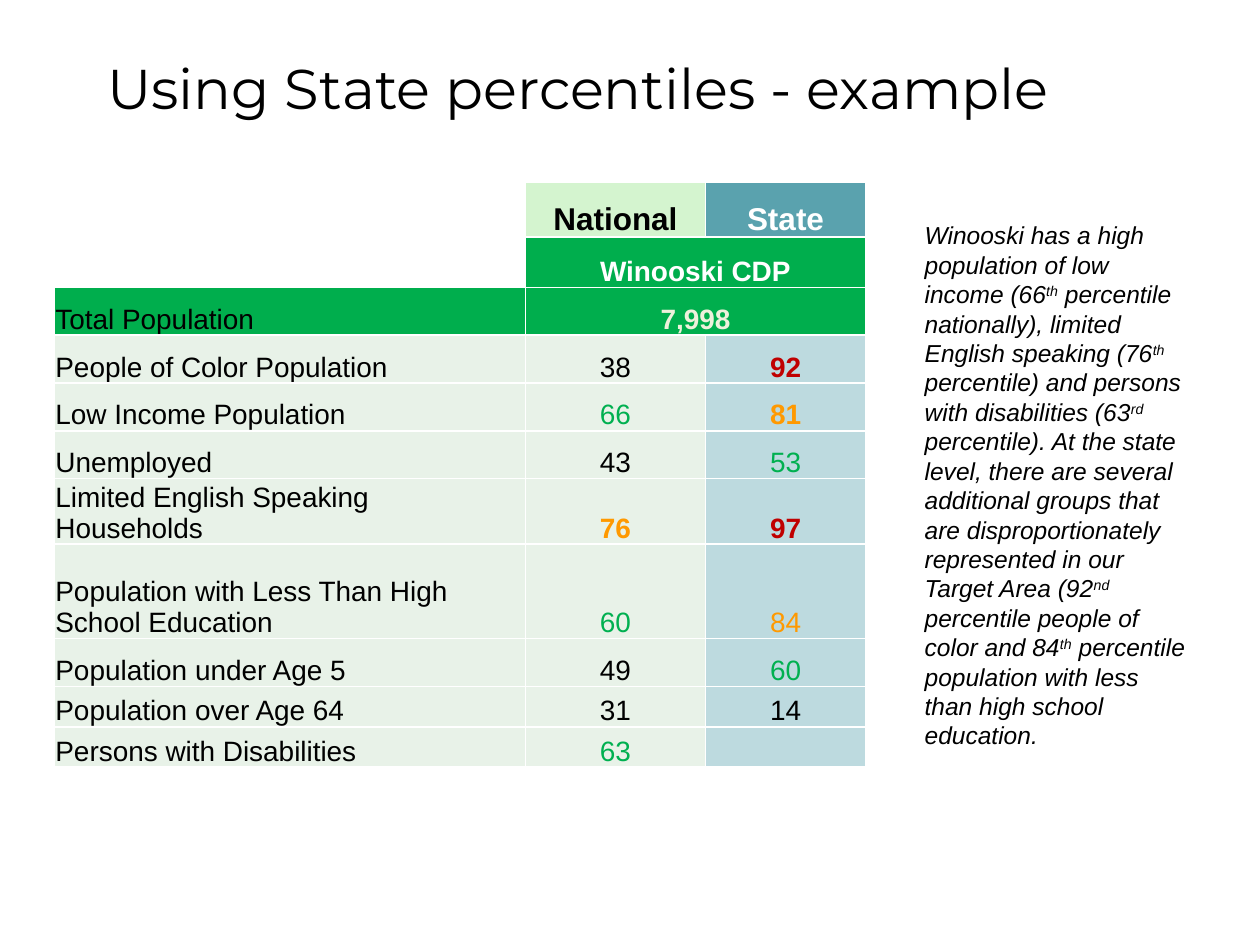
from pptx import Presentation
from pptx.dml.color import RGBColor
from pptx.enum.text import MSO_ANCHOR, PP_ALIGN
from pptx.util import Inches, Pt

LEFT, CENTER = PP_ALIGN.LEFT, PP_ALIGN.CENTER
MIDDLE, BOTTOM = MSO_ANCHOR.MIDDLE, MSO_ANCHOR.BOTTOM

BLACK = RGBColor(0x00, 0x00, 0x00)
WHITE = RGBColor(0xFF, 0xFF, 0xFF)
CREAM = RGBColor(0xEE, 0xF1, 0xDB)
MINT = RGBColor(0xD4, 0xF4, 0xCF)
TEAL = RGBColor(0x5A, 0xA2, 0xAE)
BAND = RGBColor(0x00, 0xAE, 0x4D)
PALE = RGBColor(0xE8, 0xF2, 0xE8)
SKY = RGBColor(0xBD, 0xDA, 0xDF)
RED = RGBColor(0xC0, 0x00, 0x00)
ORANGE = RGBColor(0xFF, 0x99, 0x00)
GREEN = RGBColor(0x00, 0xB0, 0x50)

WIDTHS = [3.74, 1.43, 1.27]
HEADS = [0.43, 0.4, 0.38]
# label, national percentile, state percentile, row height
GROUPS = [
    ("People of Color Population", 38, 92, 0.38),
    ("Low Income Population", 66, 81, 0.38),
    ("Unemployed", 43, 53, 0.38),
    ("Limited English Speaking Households", 76, 97, 0.52),
    ("Population with Less Than High School Education", 60, 84, 0.75),
    ("Population under Age 5", 49, 60, 0.38),
    ("Population over Age 64", 31, 14, 0.32),
    ("Persons with Disabilities", 63, None, 0.32),
]
PLAIN = {84}  # high value that is not set in bold
# Carets enclose superscripts
NOTE = (
    "Winooski has a high population of low income (66^th^ percentile "
    "nationally), limited English speaking (76^th^ percentile) and persons "
    "with disabilities (63^rd^ percentile). At the state level, there are "
    "several additional groups that are disproportionately represented in "
    "our Target Area (92^nd^ percentile people of color and 84^th^ "
    "percentile population with less than high school education."
)


def set_font(para, name, size, color, bold=False, italic=False):
    font = para.font
    font.name, font.size = name, Pt(size)
    font.bold, font.italic = bold, italic
    font.color.rgb = color


def fill_cell(row, col, text, fill, color=BLACK, bold=False, size=16):
    cell = table.cell(row, col)
    cell.fill.solid()
    cell.fill.fore_color.rgb = fill
    cell.vertical_anchor = BOTTOM
    cell.margin_left = cell.margin_right = cell.margin_top = Inches(0.01)
    cell.margin_bottom = 0
    cell.text = text
    para = cell.text_frame.paragraphs[0]
    para.alignment = CENTER if col else LEFT
    set_font(para, "Arial", size, color, bold)


deck = Presentation()
deck.slide_width, deck.slide_height = Inches(10), Inches(7.5)
slide = deck.slides.add_slide(deck.slide_layouts[5])

# Title
title = slide.shapes.title
title.left, title.top = Inches(0.75), Inches(0)
title.width, title.height = Inches(8.81), Inches(1.45)
title.text_frame.text = "Using State percentiles - example"
title.text_frame.vertical_anchor = MIDDLE
para = title.text_frame.paragraphs[0]
para.alignment = LEFT
para.line_spacing = 0.9
set_font(para, "Montserrat", 32, BLACK)

# Table
heights = HEADS + [group[-1] for group in GROUPS]
table = slide.shapes.add_table(
    len(heights), len(WIDTHS), Inches(0.43), Inches(1.45),
    Inches(sum(WIDTHS)), Inches(sum(heights))).table
table.first_row = table.horz_banding = False
for column, width in zip(table.columns, WIDTHS):
    column.width = Inches(width)
for row, height in zip(table.rows, heights):
    row.height = Inches(height)
for row in (1, 2):
    table.cell(row, 1).merge(table.cell(row, 2))

fill_cell(0, 0, "", WHITE)
fill_cell(0, 1, "National", MINT, BLACK, True, 18)
fill_cell(0, 2, "State", TEAL, WHITE, True, 18)
fill_cell(1, 0, "", WHITE)
fill_cell(1, 1, "Winooski CDP", BAND, WHITE, True)
fill_cell(2, 0, "Total Population", BAND)
fill_cell(2, 1, "7,998", BAND, CREAM, True)

for row, (label, nation, state, _) in enumerate(GROUPS, len(HEADS)):
    fill_cell(row, 0, label, PALE)
    for col, value, fill in ((1, nation, PALE), (2, state, SKY)):
        if value is None:
            fill_cell(row, col, "", fill)
            continue
        if value >= 90:
            color = RED
        elif value >= 75:
            color = ORANGE
        else:
            color = GREEN if value >= 50 else BLACK
        bold = value >= 75 and value not in PLAIN
        fill_cell(row, col, str(value), fill, color, bold)

# Side note
note = slide.shapes.add_textbox(
    Inches(7.24), Inches(1.7), Inches(2.32), Inches(4.11))
note.text_frame.word_wrap = True
para = note.text_frame.paragraphs[0]
set_font(para, "Arial", 14, BLACK, italic=True)
for index, part in enumerate(NOTE.split("^")):
    run = para.add_run()
    run.text = part
    if index % 2:
        run.font._element.set("baseline", "30000")

deck.save("out.pptx")
